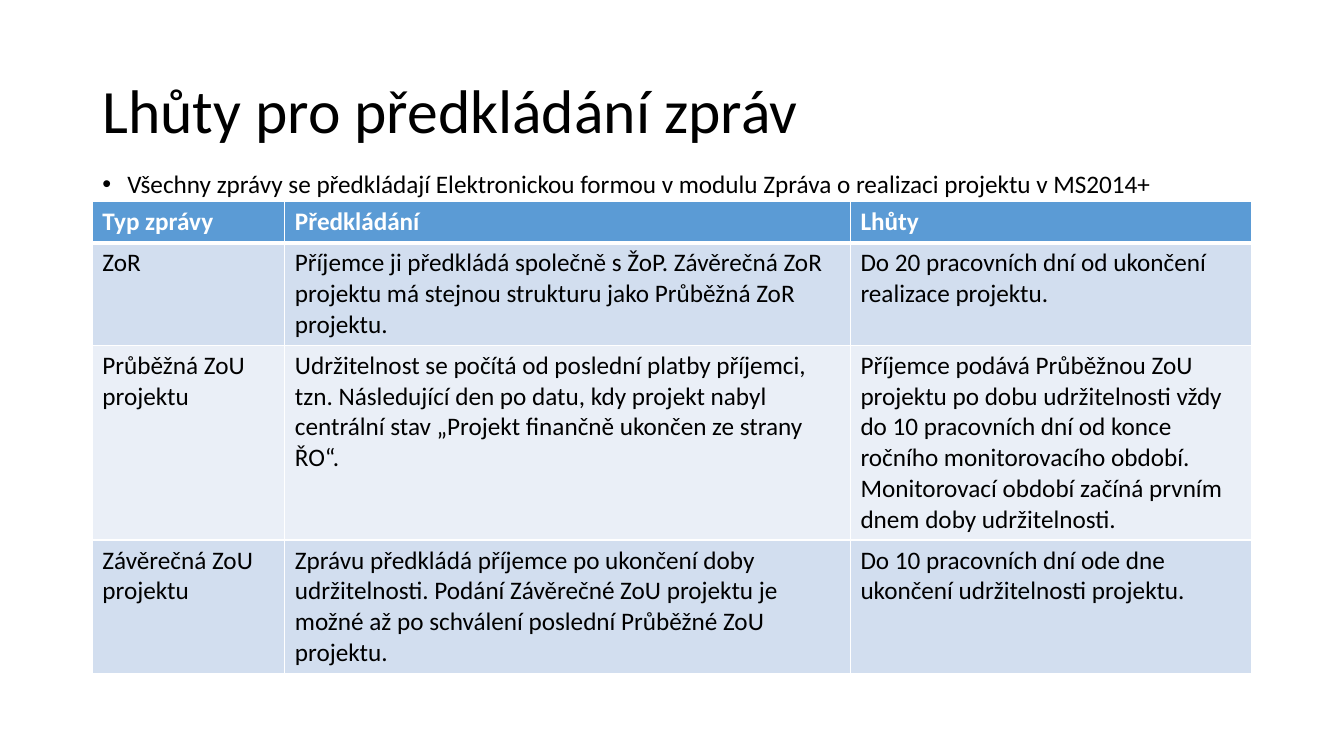
import pptx
import pptx.util
import pptx.dml.color
import pptx.enum.text
import pptx.oxml
import pptx.oxml.ns
from pptx.util import Pt

BLACK = pptx.dml.color.RGBColor(0x00, 0x00, 0x00)
WHITE = pptx.dml.color.RGBColor(0xFF, 0xFF, 0xFF)
HEADER_BLUE = pptx.dml.color.RGBColor(0x5B, 0x9B, 0xD5)
BAND_DARK = pptx.dml.color.RGBColor(0xD2, 0xDE, 0xEF)
BAND_LIGHT = pptx.dml.color.RGBColor(0xEA, 0xEF, 0xF7)

LEFT, WIDTH = Pt(66), Pt(828)
COLUMN_WIDTHS = [137.5, 404, 286.5]
ROW_HEIGHTS = [29.2, 73.2, 139.2, 95.2]
REPORTS = [
    ["Typ zprávy", "Předkládání", "Lhůty"],
    ["ZoR",
     "Příjemce ji předkládá společně s ŽoP. Závěrečná ZoR projektu má stejnou "
     "strukturu jako Průběžná ZoR projektu.",
     "Do 20 pracovních dní od ukončení realizace projektu."],
    ["Průběžná ZoU projektu",
     "Udržitelnost se počítá od poslední platby příjemci, tzn. Následující den po "
     "datu, kdy projekt nabyl centrální stav „Projekt finančně ukončen ze strany ŘO“.",
     "Příjemce podává Průběžnou ZoU projektu po dobu udržitelnosti vždy do 10 "
     "pracovních dní od konce ročního monitorovacího období. Monitorovací období "
     "začíná prvním dnem doby udržitelnosti."],
    ["Závěrečná ZoU projektu",
     "Zprávu předkládá příjemce po ukončení doby udržitelnosti. Podání Závěrečné "
     "ZoU projektu je možné až po schválení poslední Průběžné ZoU projektu.",
     "Do 10 pracovních dní ode dne ukončení udržitelnosti projektu."],
]


def set_font(paragraph, size, color, bold=False):
    paragraph.font.name = "Calibri"
    paragraph.font.size = Pt(size)
    paragraph.font.color.rgb = color
    paragraph.font.bold = bold


def add_border(cell, side, width):
    """Draw a white line on one side (L, R, T or B) of a cell."""
    cell._tc.get_or_add_tcPr().append(pptx.oxml.parse_xml(
        f'<a:ln{side} {pptx.oxml.ns.nsdecls("a")} w="{Pt(width)}">'
        f'<a:solidFill><a:srgbClr val="{WHITE}"/></a:solidFill></a:ln{side}>'))


presentation = pptx.Presentation()
presentation.slide_width, presentation.slide_height = Pt(960), Pt(540)
slide = presentation.slides.add_slide(presentation.slide_layouts[6])

# Title
title = slide.shapes.add_textbox(LEFT, Pt(28.75), WIDTH, Pt(104.4)).text_frame
title.word_wrap = True
title.vertical_anchor = pptx.enum.text.MSO_ANCHOR.MIDDLE
heading = title.paragraphs[0]
heading.text = "Lhůty pro předkládání zpráv"
heading.line_spacing = 0.9
set_font(heading, 44, BLACK)

# Bulleted introduction
intro = slide.shapes.add_textbox(LEFT, Pt(118.8), WIDTH, Pt(368)).text_frame
intro.word_wrap = True
submission = intro.paragraphs[0]
submission.text = ("Všechny zprávy se předkládají Elektronickou formou v modulu "
                   "Zpráva o realizaci projektu v MS2014+")
submission.line_spacing = 0.9
bullet_properties = submission._p.get_or_add_pPr()
bullet_properties.set("marL", str(Pt(18)))
bullet_properties.set("indent", str(-Pt(18)))
for bullet_xml in ('<a:buFont {} typeface="Arial"/>', '<a:buChar {} char="•"/>'):
    bullet_properties.append(
        pptx.oxml.parse_xml(bullet_xml.format(pptx.oxml.ns.nsdecls("a"))))
set_font(submission, 18, BLACK)

# Table of reports and deadlines
deadlines = slide.shapes.add_table(
    len(REPORTS), len(COLUMN_WIDTHS), LEFT, Pt(144.2), WIDTH,
    Pt(sum(ROW_HEIGHTS))).table
for column, width in zip(deadlines.columns, COLUMN_WIDTHS):
    column.width = Pt(width)
for row_index, report in enumerate(REPORTS):
    deadlines.rows[row_index].height = Pt(ROW_HEIGHTS[row_index])
    is_header = row_index == 0
    band = BAND_DARK if row_index % 2 else BAND_LIGHT
    for column_index, text in enumerate(report):
        cell = deadlines.cell(row_index, column_index)
        cell.text = text
        set_font(cell.text_frame.paragraphs[0], 18,
                 WHITE if is_header else BLACK, is_header)
        add_border(cell, "L", 1)
        add_border(cell, "R", 1)
        add_border(cell, "T", 3 if row_index == 1 else 1)
        add_border(cell, "B", 3 if is_header else 1)
        cell.fill.solid()
        cell.fill.fore_color.rgb = HEADER_BLUE if is_header else band

presentation.save("out.pptx")
